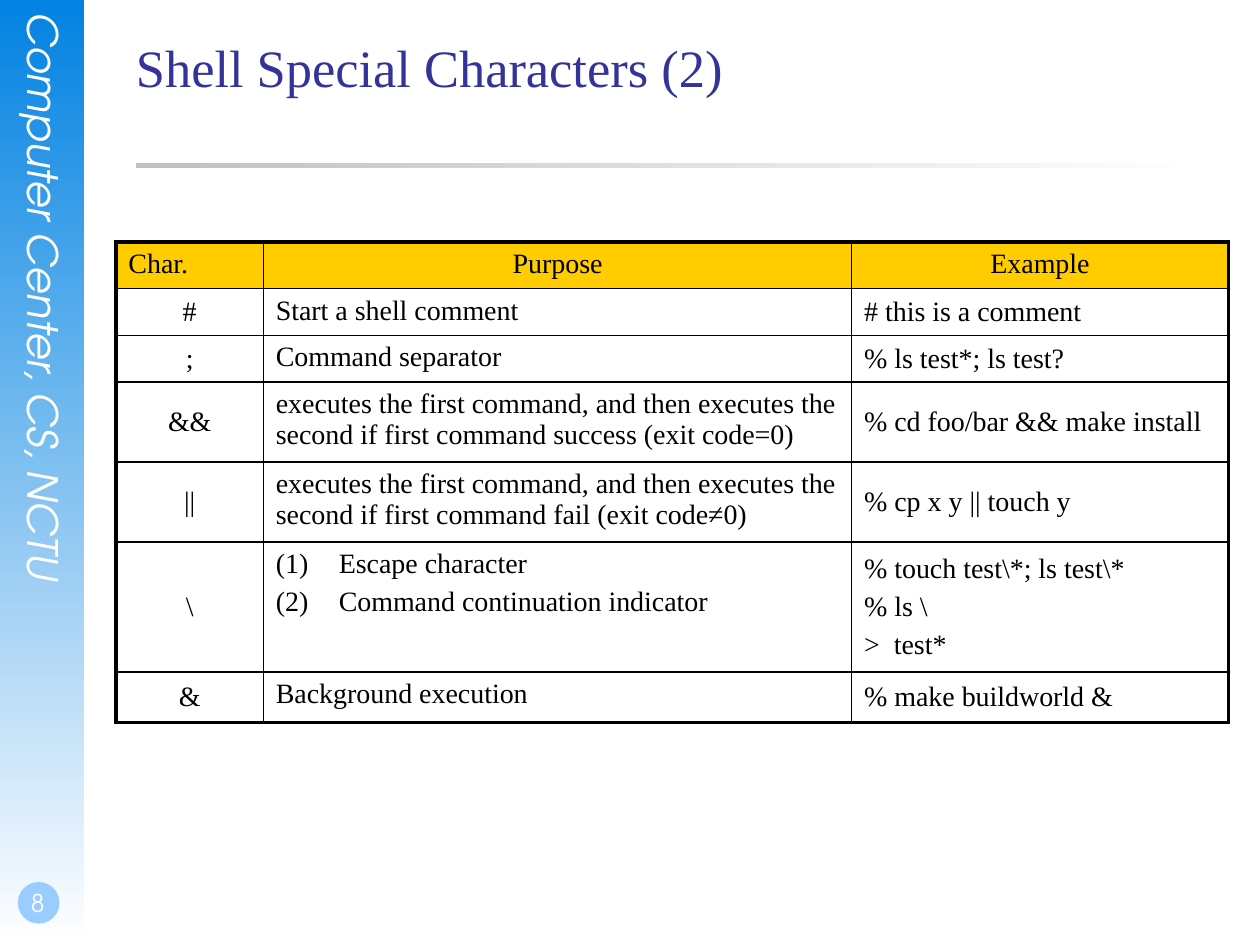
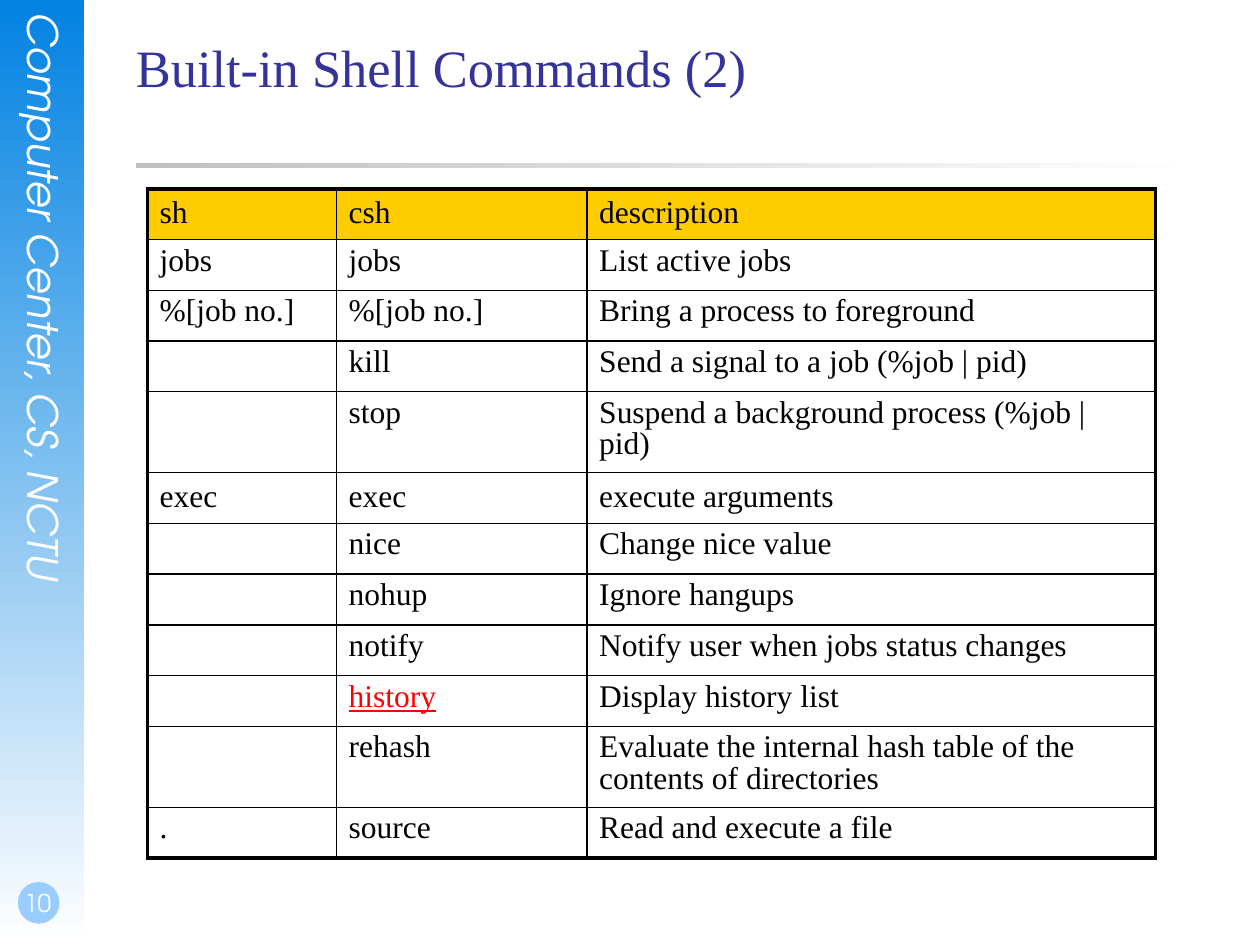
from dataclasses import dataclass, field
from typing import Any

from lxml.etree import SubElement
from pptx import Presentation
from pptx.dml.color import RGBColor
from pptx.enum.shapes import MSO_SHAPE as Shape
from pptx.enum.text import MSO_ANCHOR as Anchor, PP_ALIGN as Align
from pptx.oxml.ns import qn
from pptx.util import Cm, Pt

SERIF = "Times New Roman"
SANS = "TeX Gyre Adventor"
BLACK, WHITE, RED = "000000", "FFFFFF", "FF0000"
NAVY, SKY, PALE_BLUE = "333399", "0282E2", "99CCFF"
SILVER, GOLD = "C0C0C0", "FFCC00"
SLIDE_WIDTH, SLIDE_HEIGHT = 25.4, 19.05
CONTENT_LEFT, CONTENT_WIDTH = 2.74, 21.59
OUTER_LINE, INNER_LINE = 2.25, 1


@dataclass(frozen=True)
class Area:
    """A rectangle in centimetres."""
    left: float
    top: float
    width: float
    height: float

    def lengths(self) -> tuple:
        """Return the four sides as lengths."""
        return Cm(self.left), Cm(self.top), Cm(self.width), Cm(self.height)


@dataclass(frozen=True)
class Style:
    """The look of a piece of text."""
    size: float
    color: str = BLACK
    name: str = SERIF
    italic: bool = False
    underline: bool = False


@dataclass(frozen=True)
class Entry:
    """A table text that departs from its column's rule."""
    text: str
    color: str = BLACK
    underline: bool = False
    numbered: bool = False


@dataclass(frozen=True)
class Column:
    """The width and text placement of a table column."""
    width: float
    head_align: Align = Align.LEFT
    align: Align = Align.LEFT
    anchor: Anchor = Anchor.TOP


@dataclass(frozen=True)
class Grid:
    """A table with a heading row."""
    left: float
    top: float
    size: float
    row_height: float
    columns: list[Column]
    rows: list[tuple]
    tall_rows: dict[int, float] = field(default_factory=dict)
    tight: bool = False
    loose_rows: tuple[int, ...] = (0,)


@dataclass(frozen=True)
class Topic:
    """The content of one slide."""
    number: int
    title: str
    grid: Grid


SPECIAL_CHARACTERS = Grid(
    2.34, 4.88, 16, 0.94,
    [
        Column(2.97, align=Align.CENTER, anchor=Anchor.MIDDLE),
        Column(11.86, head_align=Align.CENTER),
        Column(7.59, head_align=Align.CENTER, anchor=Anchor.MIDDLE),
    ],
    [
        ("Char.", "Purpose", "Example"),
        ("#", "Start a shell comment", "# this is a comment"),
        (";", "Command separator", "% ls test*; ls test?"),
        ("&&", "executes the first command, and then executes the second "
               "if first command success (exit code=0)",
         "% cd foo/bar && make install"),
        ("||", "executes the first command, and then executes the second "
               "if first command fail (exit code≠0)",
         "% cp x y || touch y"),
        ("\\", Entry("Escape character\nCommand continuation indicator", numbered=True),
         "% touch test\\*; ls test\\*\n% ls \\\n>  test*"),
        ("&", "Background execution", "% make buildworld &"),
    ],
    tall_rows={3: 1.6, 4: 1.6, 5: 2.62, 6: 1.02},
)

SHELL_COMMANDS = Grid(
    2.97, 3.81, 18, 1.02,
    [Column(3.81), Column(5.05), Column(11.46)],
    [
        ("sh", "csh", "description"),
        ("jobs", "jobs", "List active jobs"),
        ("%[job no.]", "%[job no.]", "Bring a process to foreground"),
        ("", "kill", "Send a signal to a job (%job | pid)"),
        ("", "stop", "Suspend a background process (%job | pid)"),
        ("exec", "exec", "execute arguments"),
        ("", "nice", "Change nice value"),
        ("", "nohup", "Ignore hangups"),
        ("", "notify", "Notify user when jobs status changes"),
        ("", Entry("history", RED, underline=True), "Display history list"),
        ("", "rehash", "Evaluate the internal hash table of the contents of directories"),
        (".", "source", "Read and execute a file"),
    ],
    tall_rows={10: 1.63},
    tight=True,
    loose_rows=(0, 5),
)

TOPICS = [
    Topic(8, "Shell Special Characters (2)", SPECIAL_CHARACTERS),
    Topic(10, "Built-in Shell Commands (2)", SHELL_COMMANDS),
]


def rgb(color: str) -> RGBColor:
    """Turn a hex string into a colour."""
    return RGBColor.from_string(color)


def assign(target: Any, values: dict[str, Any]) -> None:
    """Set every named attribute of the target."""
    for name, value in values.items():
        setattr(target, name, value)


def write(para: Any, text: str, style: Style) -> None:
    """Add one styled run to a paragraph."""
    span = para.add_run()
    span.text = text
    assign(span.font, {
        "name": style.name, "size": Pt(style.size),
        "italic": style.italic, "underline": style.underline,
    })
    span.font.color.rgb = rgb(style.color)


def add_label(page: Any, area: Area, text: str, style: Style,
              align: Align = Align.LEFT, **frame_values: Any) -> Any:
    """Add a text box without margins unless some are given."""
    frame = page.shapes.add_textbox(*area.lengths()).text_frame
    assign(frame, {
        "word_wrap": True, "margin_left": 0, "margin_right": 0,
        "margin_top": 0, "margin_bottom": 0, **frame_values,
    })
    para = frame.paragraphs[0]
    para.alignment = align
    write(para, text, style)
    return frame


def add_figure(page: Any, kind: Shape, area: Area, *colors: str, angle: int = 0) -> None:
    """Add a shape with a solid fill, or a gradient for two colours."""
    figure = page.shapes.add_shape(kind, *area.lengths())
    figure.shadow.inherit = False
    figure.line.fill.background()
    if len(colors) == 1:
        figure.fill.solid()
        figure.fill.fore_color.rgb = rgb(colors[0])
        return
    figure.fill.gradient()
    figure.fill.gradient_angle = angle
    for stop, color in zip(figure.fill.gradient_stops, colors):
        stop.color.rgb = rgb(color)


def add_frame(page: Any, topic: Topic) -> None:
    """Draw the side band, page number, title and title rule."""
    add_figure(page, Shape.RECTANGLE, Area(0, 0, 1.7, SLIDE_HEIGHT), SKY, WHITE, angle=270)
    banner = add_label(page, Area(0.38, 0.25, 1.02, 12.98), "Computer Center, CS, NCTU",
                       Style(24, WHITE, SANS, italic=True))
    banner._txBody.bodyPr.set("vert", "eaVert")
    add_figure(page, Shape.OVAL, Area(0.36, 17.78, 0.84, 0.84), PALE_BLUE)
    add_label(page, Area(0, 17.35, 1.47, 1.27), str(topic.number), Style(14, WHITE, SANS),
              Align.CENTER, vertical_anchor=Anchor.BOTTOM,
              margin_left=Cm(0.05), margin_bottom=Cm(0.13))
    add_figure(page, Shape.RECTANGLE, Area(CONTENT_LEFT, 3.28, CONTENT_WIDTH, 0.1),
               SILVER, WHITE)
    add_label(page, Area(CONTENT_LEFT, 0.71, CONTENT_WIDTH, 3.18), topic.title,
              Style(30, NAVY))


def set_borders(cell: Any, widths: dict[str, float]) -> None:
    """Draw the cell's edges in black."""
    properties = cell._tc.get_or_add_tcPr()
    for side, width in widths.items():
        line = SubElement(properties, qn(f"a:ln{side}"), w=str(Pt(width)))
        SubElement(SubElement(line, qn("a:solidFill")), qn("a:srgbClr"), val=BLACK)


def number_paragraph(para: Any) -> None:
    """Give a paragraph a hanging number in brackets."""
    properties = para._p.get_or_add_pPr()
    properties.set("marL", str(Cm(1.27)))
    properties.set("indent", str(Cm(-1.27)))
    SubElement(properties, qn("a:buAutoNum"), type="arabicParenBoth")


def fill_cell(cell: Any, entry: Entry, size: float, align: Align, spacing: float) -> None:
    """Write an entry into a cell, one paragraph per line."""
    style = Style(size, entry.color, underline=entry.underline)
    for index, text in enumerate(entry.text.splitlines()):
        frame = cell.text_frame
        para = frame.add_paragraph() if index else frame.paragraphs[0]
        assign(para, {
            "alignment": align, "space_before": Pt(size / 4), "line_spacing": spacing,
        })
        if entry.numbered:
            number_paragraph(para)
        write(para, text, style)


def add_grid(page: Any, grid: Grid) -> None:
    """Draw a table with a gold heading and a heavy outline."""
    heights = [grid.tall_rows.get(index, grid.row_height) for index in range(len(grid.rows))]
    area = Area(grid.left, grid.top, sum(column.width for column in grid.columns), sum(heights))
    table = page.shapes.add_table(len(grid.rows), len(grid.columns), *area.lengths()).table
    assign(table, {"first_row": False, "horz_banding": False})
    for table_column, column in zip(table.columns, grid.columns):
        table_column.width = Cm(column.width)
    last_row, last_column = len(grid.rows) - 1, len(grid.columns) - 1
    for row, (height, texts) in enumerate(zip(heights, grid.rows)):
        table.rows[row].height = Cm(height)
        heading = row == 0
        spacing = 0.9 if grid.tight and row not in grid.loose_rows else 1.0
        for index, (column, text) in enumerate(zip(grid.columns, texts)):
            cell = table.cell(row, index)
            outer = {"L": index == 0, "R": index == last_column,
                     "T": heading, "B": row == last_row}
            set_borders(cell, {side: OUTER_LINE if edge else INNER_LINE
                               for side, edge in outer.items()})
            if heading:
                cell.fill.solid()
                cell.fill.fore_color.rgb = rgb(GOLD)
            else:
                cell.fill.background()
            assign(cell, {
                "vertical_anchor": Anchor.TOP if heading else column.anchor,
                "margin_left": Cm(0.25), "margin_right": Cm(0.25),
                "margin_top": Cm(0.13), "margin_bottom": Cm(0.13),
            })
            entry = text if isinstance(text, Entry) else Entry(text)
            align = column.head_align if heading else column.align
            fill_cell(cell, entry, grid.size, align, spacing)


def main() -> None:
    """Build the deck and save it."""
    deck = Presentation()
    assign(deck, {"slide_width": Cm(SLIDE_WIDTH), "slide_height": Cm(SLIDE_HEIGHT)})
    for topic in TOPICS:
        page = deck.slides.add_slide(deck.slide_layouts[6])
        add_frame(page, topic)
        add_grid(page, topic.grid)
    deck.save("out.pptx")


if __name__ == "__main__":
    main()
